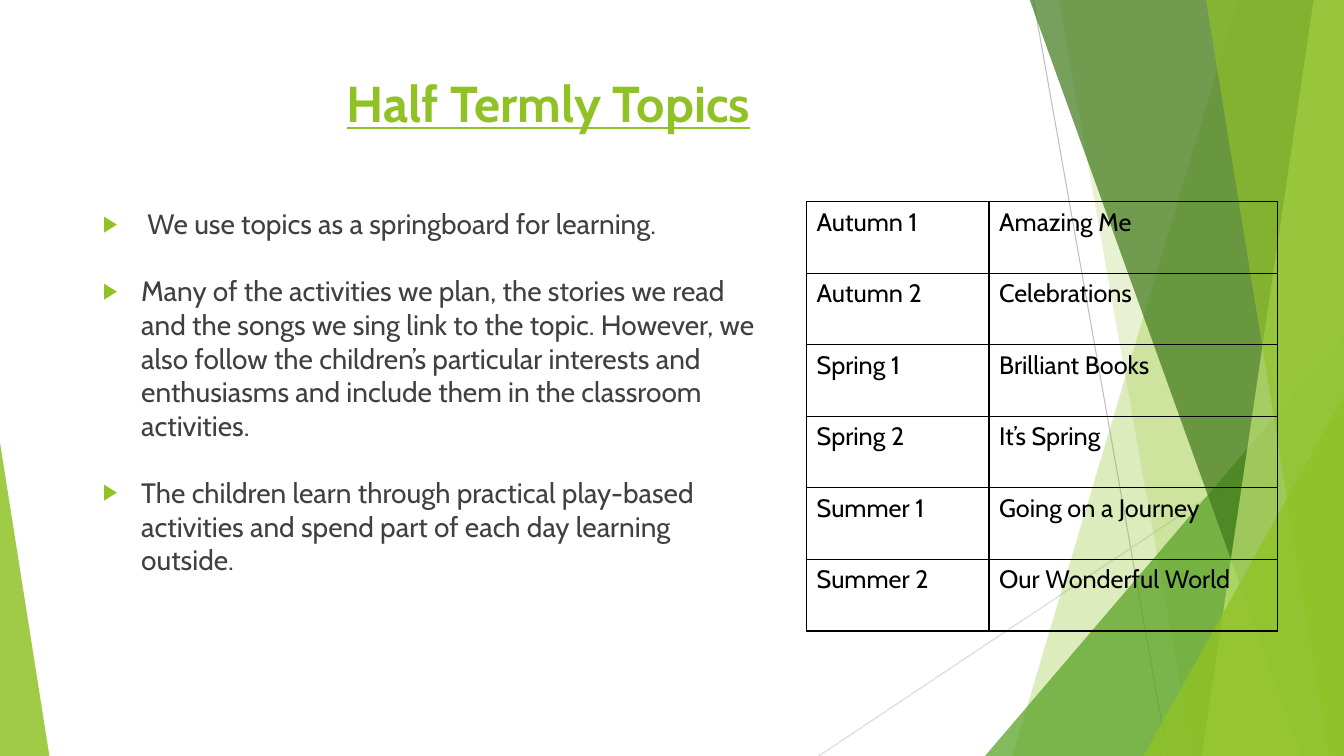
from lxml import etree
from pptx import Presentation
from pptx.dml.color import RGBColor
from pptx.enum.shapes import MSO_CONNECTOR, MSO_SHAPE
from pptx.enum.text import MSO_ANCHOR, MSO_AUTO_SIZE, PP_ALIGN
from pptx.oxml import parse_xml
from pptx.oxml.ns import nsdecls, qn
from pptx.util import Inches, Pt

WIDTH, HEIGHT = 13.33, 7.5
FONT, GREEN, GREY, BLACK = "Cabin", "90C226", "404040", "000000"

# Start, end, colour
LINES = [
    ((10.25, 0), (11.58, HEIGHT), "BFBFBF"),
    ((WIDTH, 4.03), (8.12, HEIGHT), "D9D9D9"),
]
# Bands reach the right edge: left end at the top, left end at the bottom
BAND, TRIANGLE = "band", "triangle"
FACETS = [
    (BAND, (12.28, 10.04), GREEN, 30),
    (BAND, (10.5, 11.83), GREEN, 20),
    (TRIANGLE, (9.77, 3.33, 3.56, 1), "54A021", 72),
    (BAND, (10.21, 12.91), "3F7819", 70),
    (BAND, (13.03, 11.92), "C0E474", 70),
    (BAND, (11.96, 13.18), GREEN, 65),
    (TRIANGLE, (11.34, 3.93, 1.99, 1), GREEN, 80),
    (TRIANGLE, (0, 4.39, 0.49, 0), GREEN, 85),
]
POINTS = [
    " We use topics as a springboard for learning.",
    "Many of the activities we plan, the stories we read and the songs we sing "
    "link to the topic. However, we also follow the children’s particular "
    "interests and enthusiasms and include them in the classroom activities.",
    "The children learn through practical play-based activities and spend part "
    "of each day learning outside.",
]
TOPICS = [
    ("Autumn 1", "Amazing Me"),
    ("Autumn 2", "Celebrations"),
    ("Spring 1", "Brilliant Books"),
    ("Spring 2", "It’s Spring"),
    ("Summer 1", "Going on a Journey"),
    ("Summer 2", "Our Wonderful World"),
]


def rgb(color):
    return RGBColor.from_string(color)


def write(p, text, color, **formats):
    r = p.add_run()
    r.text = text
    r.font.color.rgb = rgb(color)
    for name, value in {"name": FONT, **formats}.items():
        setattr(r.font, name, value)


def add_line(s, start, end, color):
    line = s.shapes.add_connector(
        MSO_CONNECTOR.STRAIGHT, *map(Inches, (*start, *end)))
    line.line.color.rgb = rgb(color)
    line.line.width = Pt(0.75)
    etree.SubElement(line._element.spPr, qn("a:effectLst"))


def add_band(s, top, bottom):
    corners = [(top, -0.01), (WIDTH, -0.01), (WIDTH, HEIGHT), (bottom, HEIGHT)]
    corners = [(Inches(x), Inches(y)) for x, y in corners]
    builder = s.shapes.build_freeform(*corners[0])
    builder.add_line_segments(corners[1:], close=True)
    return builder.convert_to_shape()


def add_triangle(s, left, top, width, apex):
    sp = s.shapes.add_shape(MSO_SHAPE.ISOSCELES_TRIANGLE, *map(
        Inches, (left, top, width, HEIGHT - top)))
    sp.adjustments[0] = apex
    return sp


def paint(sp, color, opacity):
    sp.shadow.inherit = False
    sp.line.fill.background()
    sp.fill.solid()
    sp.fill.fore_color.rgb = rgb(color)
    clr = sp._element.spPr.find(".//" + qn("a:srgbClr"))
    etree.SubElement(clr, qn("a:alpha"), val=str(opacity * 1000))


def place(ph, left, top, width, height):
    """Set a placeholder's box and bring it to the front."""
    box = {"left": left, "top": top, "width": width, "height": height}
    for name, value in box.items():
        setattr(ph, name, Inches(value))
    tf = ph.text_frame
    frame = {"word_wrap": True, "auto_size": MSO_AUTO_SIZE.NONE,
             "vertical_anchor": MSO_ANCHOR.TOP}
    for name, value in frame.items():
        setattr(tf, name, value)
    ph._element.getparent().append(ph._element)
    return tf


def add_bullet(p):
    pPr = p._p.get_or_add_pPr()
    pPr.set("marL", str(Inches(0.38)))
    pPr.set("indent", str(-Inches(0.38)))
    clr = etree.SubElement(pPr, qn("a:buClr"))
    etree.SubElement(clr, qn("a:srgbClr"), val=GREEN)
    etree.SubElement(pPr, qn("a:buSzPct"), val="80000")
    etree.SubElement(pPr, qn("a:buChar"), char="▶")


def fill_list(tf, points):
    for i, text in enumerate(points):
        p = tf.paragraphs[0] if i == 0 else tf.add_paragraph()
        p.space_before = Pt(24 if i else 0)
        add_bullet(p)
        write(p, text, GREY, size=Pt(20))


def add_borders(cell):
    tcPr = cell._tc.get_or_add_tcPr()
    for side in "LRTB":
        tcPr.append(parse_xml(
            f'<a:ln{side} {nsdecls("a")} w="{Pt(1)}"><a:solidFill>'
            f'<a:srgbClr val="{BLACK}"/></a:solidFill></a:ln{side}>'))


def add_topics_table(s, rows, left, top, widths, row_height):
    table = s.shapes.add_table(
        len(rows), len(widths), Inches(left), Inches(top),
        Inches(sum(widths)), Inches(row_height * len(rows))).table
    table.first_row = table.horz_banding = False
    for column, width in zip(table.columns, widths):
        column.width = Inches(width)
    for i, row in enumerate(rows):
        for j, text in enumerate(row):
            cell = table.cell(i, j)
            add_borders(cell)
            cell.fill.background()
            write(cell.text_frame.paragraphs[0], text, BLACK, size=Pt(18))


def main():
    prs = Presentation()
    prs.slide_width, prs.slide_height = Inches(WIDTH), Inches(HEIGHT)
    s = prs.slides.add_slide(prs.slide_layouts[1])

    # Faceted background
    for line in LINES:
        add_line(s, *line)
    makers = {BAND: add_band, TRIANGLE: add_triangle}
    for kind, geometry, color, opacity in FACETS:
        paint(makers[kind](s, *geometry), color, opacity)

    # Title
    p = place(s.shapes.title, 0.74, 0.67, 9.4, 1.44).paragraphs[0]
    p.alignment = PP_ALIGN.CENTER
    write(p, "Half Termly Topics", GREEN, size=Pt(36), bold=True, underline=True)

    # Bullet list
    fill_list(place(s.placeholders[1], 0.92, 2, 6.69, 3.48), POINTS)

    # Topics by half term
    add_topics_table(s, TOPICS, 8, 2, (1.81, 2.86), 0.71)

    prs.save("out.pptx")


if __name__ == "__main__":
    main()
